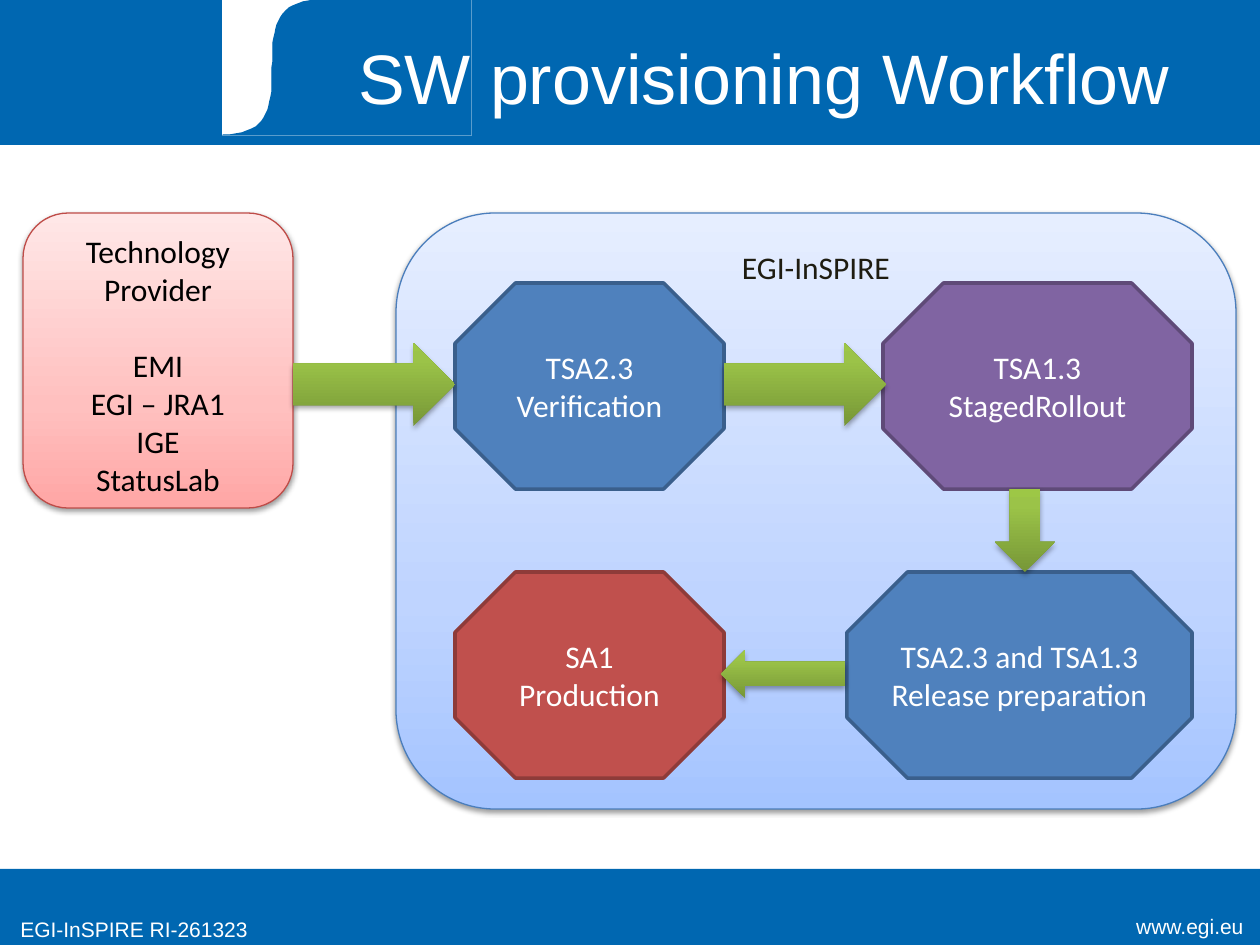
from copy import deepcopy
from pptx import Presentation
from pptx.dml.color import RGBColor as Rgb
from pptx.enum.shapes import MSO_SHAPE as Kind
from pptx.enum.text import MSO_ANCHOR as Anchor, PP_ALIGN as Align
from pptx.oxml import parse_xml
from pptx.oxml.ns import nsdecls
from pptx.util import Pt

PX = 914400 / 126


class Theme:
    brand, white, black, ink = "0067B1", "FFFFFF", "000000", "1E1C11"
    blue = ("4F81BD", "3A5F8C")
    plum = ("8064A2", "5F4A78")
    red = ("C0504D", "8E3B39")
    pink = ((0, "FFA6A5"), (35, "FFC0BF"), (100, "FFE7E7"))
    sky = ((0, "A4C4FF"), (35, "BFD4FF"), (100, "E6EEFF"))
    green = ((0, "779737"), (80, "9BC348"), (100, "9DC746"))
    rose, steel = "BF4C48", "4B7EBC"
    soft, deep = (38, 20000), (35, 23000)
    title = {"name": "Arial", "size": Pt(40)}
    foot = {"name": "Arial", "size": Pt(12)}
    body = {"name": "Calibri", "size": Pt(18)}


def emu(*nums):
    return [round(n * PX) for n in nums]


def put(item, form):
    for key, val in form.items():
        setattr(item, key, val)


def shade(shape, stops):
    fill = shape.fill
    fill.gradient()
    fill.gradient_angle = 90
    rack = shape._element.xpath(".//a:gsLst")[0]
    rack.append(deepcopy(rack[0]))
    for stop, (pos, tone) in zip(fill.gradient_stops, stops):
        put(stop, {"position": pos / 100})
        stop.color.rgb = Rgb.from_string(tone)


def cast(shape, alpha, dist):
    shape._element.xpath("./p:spPr/a:effectLst")[0].append(parse_xml(
        f'<a:outerShdw {nsdecls("a")} blurRad="40000" dist="{dist}" dir="5400000" '
        f'rotWithShape="0"><a:srgbClr val="{Theme.black}">'
        f'<a:alpha val="{alpha * 1000}"/></a:srgbClr></a:outerShdw>'))


def paint(shape, fill, line=None, width=0.75, glow=None):
    shape.shadow.inherit = False
    if isinstance(fill, str):
        shape.fill.solid()
        shape.fill.fore_color.rgb = Rgb.from_string(fill)
    else:
        shade(shape, fill)
    if line:
        shape.line.color.rgb = Rgb.from_string(line)
        shape.line.width = Pt(width)
    else:
        shape.line.fill.background()
    if glow:
        cast(shape, *glow)


def draw(slide, kind, box, *look, **more):
    shape = slide.shapes.add_shape(kind, *emu(*box))
    paint(shape, *look, **more)
    return shape


def write(shape, lines, font, tone, align=Align.CENTER, anchor=Anchor.MIDDLE, gap=None):
    frame = shape.text_frame
    put(frame, {"word_wrap": True, "vertical_anchor": anchor, "text": "\n".join(lines)})
    for row, para in enumerate(frame.paragraphs):
        para.alignment = align
        put(para.font, font)
        para.font.color.rgb = Rgb.from_string(tone)
        if row == gap:
            para.space_before = Pt(22)


def label(slide, box, text, font, **more):
    write(slide.shapes.add_textbox(*emu(*box)), [text], font, Theme.white, **more)


def curve(ends, steps=40):
    for step in range(steps + 1):
        t = step / steps
        parts = ((1 - t) ** 3, 3 * t * (1 - t) ** 2, 3 * t * t * (1 - t), t ** 3)
        yield tuple(sum(p * end[axis] for p, end in zip(parts, ends)) for axis in (0, 1))


def header(slide, box):
    x, y, w, h = box
    draw(slide, Kind.RECTANGLE, box, Theme.brand, Theme.brand)
    left, right, base, bend = x + 223, x + 471, y + 135, x + 322
    draw(slide, Kind.RECTANGLE, (left, y, right - left, base - y), Theme.white, Theme.white)
    pen = slide.shapes.build_freeform(right, y, scale=PX)
    pen.add_line_segments([(right, base), *curve(
        ((left, base), (bend, base), (left, y), (bend, y)))])
    paint(pen.convert_to_shape(), Theme.brand, Theme.brand)
    label(slide, (x + 292, y + 16, 943, 120), "SW provisioning Workflow", Theme.title)


def footer(slide, box):
    x, y, w, h = box
    draw(slide, Kind.RECTANGLE, box, Theme.brand)
    label(slide, (x + w - 203, y + 38, 199, 39), "www.egi.eu", Theme.foot,
          align=Align.RIGHT, anchor=Anchor.TOP)
    label(slide, (x + 8, y + 41, 315, 39), "EGI-InSPIRE RI-261323", Theme.foot,
          align=Align.LEFT, anchor=Anchor.TOP)


def flow(slide, box):
    x, y, w, h = box
    tech = draw(slide, Kind.ROUNDED_RECTANGLE, (x, y, 270, 295), Theme.pink, Theme.rose,
                glow=Theme.soft)
    write(tech, ["Technology", "Provider", "EMI", "EGI – JRA1", "IGE", "StatusLab"],
          Theme.body, Theme.black, anchor=Anchor.TOP, gap=2)
    stage = draw(slide, Kind.ROUNDED_RECTANGLE, (x + 373, y, w - 373, h), Theme.sky,
                 Theme.steel, glow=Theme.soft)
    write(stage, ["EGI-InSPIRE"], Theme.body, Theme.ink, anchor=Anchor.TOP)

    top, low, tall = y + 70, y + 359, 206
    near, far = x + 432, x + 1169
    steps = (
        (near, top, 269, Theme.blue, ("TSA2.3", "Verification")),
        (far - 309, top, 309, Theme.plum, ("TSA1.3", "StagedRollout")),
        (far - 345, low, 345, Theme.blue, ("TSA2.3 and TSA1.3", "Release preparation")),
        (near, low, 269, Theme.red, ("SA1", "Production")),
    )
    for left, high, wide, look, lines in steps:
        step = draw(slide, Kind.OCTAGON, (left, high, wide, tall), *look, width=2)
        write(step, lines, Theme.body, Theme.white)

    arrows = (
        (Kind.RIGHT_ARROW, (x + 270, y + 130, 162, 83)),
        (Kind.RIGHT_ARROW, (near + 269, y + 130, 162, 83)),
        (Kind.DOWN_ARROW, (x + 972, top + tall, 60, 83)),
        (Kind.LEFT_ARROW, (near + 266, y + 437, 124, 48)),
    )
    for kind, spot in arrows:
        draw(slide, kind, spot, Theme.green, glow=Theme.deep)


def main():
    deck = Presentation()
    wide, high = 1260, 945
    deck.slide_width, deck.slide_height = emu(wide, high)
    slide = deck.slides.add_slide(deck.slide_layouts[6])
    footer(slide, (0, 869, wide, 76))
    header(slide, (0, 0, wide, 144))
    flow(slide, (23, 213, 1213, 596))
    deck.save("out.pptx")


if __name__ == "__main__":
    main()
